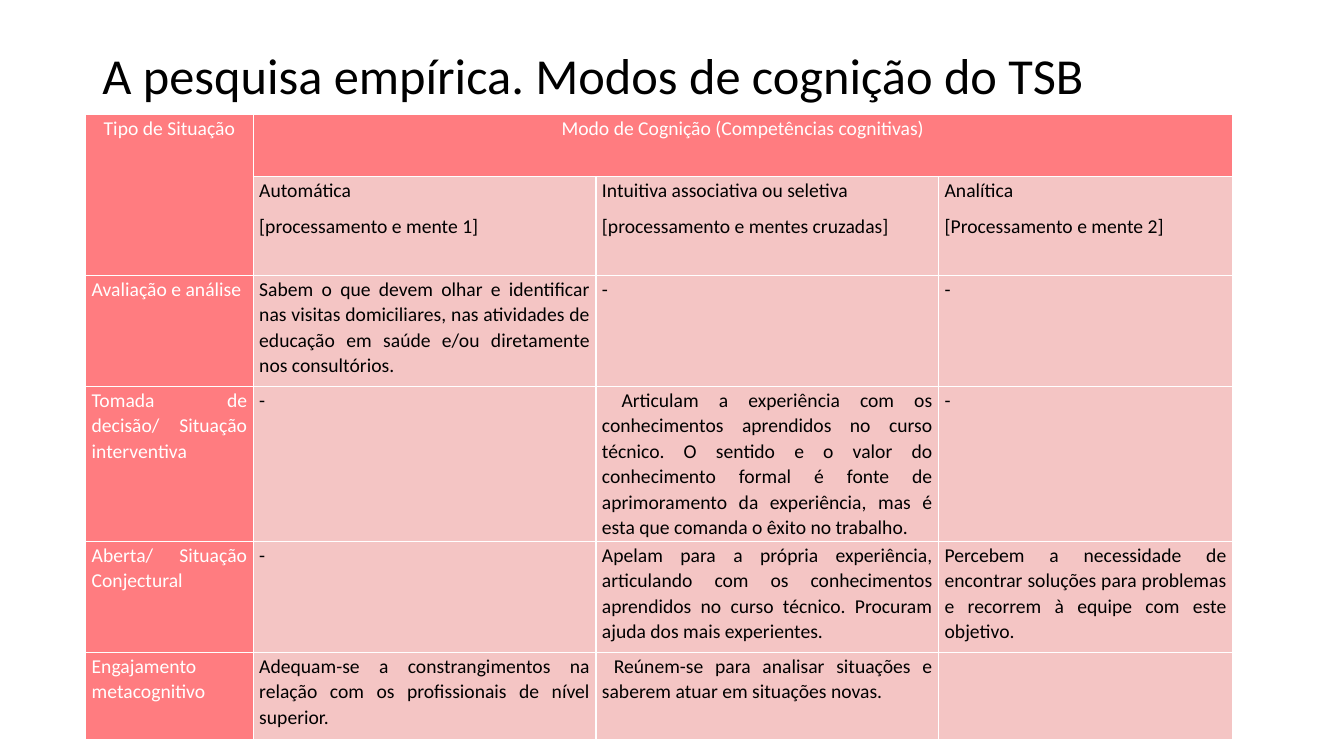
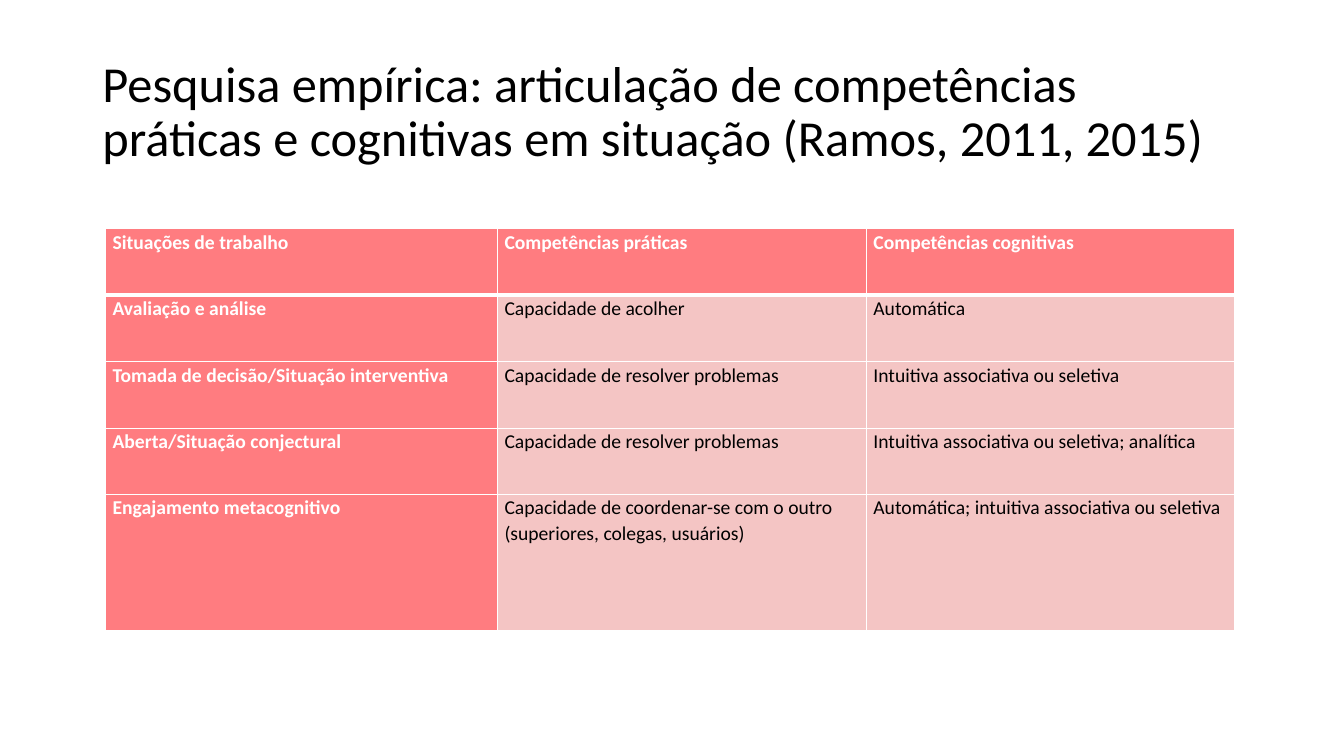
from dataclasses import dataclass

from lxml import etree
from pptx import Presentation
from pptx.dml.color import RGBColor
from pptx.enum.text import MSO_ANCHOR, MSO_AUTO_SIZE, PP_ALIGN
from pptx.oxml.ns import qn
from pptx.util import Pt

LEFT, CENTER, JUSTIFY = PP_ALIGN.LEFT, PP_ALIGN.CENTER, PP_ALIGN.JUSTIFY
MIDDLE, TOP = MSO_ANCHOR.MIDDLE, MSO_ANCHOR.TOP
NO_AUTOFIT = MSO_AUTO_SIZE.NONE
TITLE_ONLY = 5


@dataclass(frozen=True)
class Theme:
    font: str = "Calibri"
    title_size: float = 36
    cell_size: float = 14
    title_spacing: float = 0.9
    cell_spacing: float = 1.07
    text: str = "000000"
    header_text: str = "FFFFFF"
    header_fill: str = "FF7C80"
    body_fill: str = "F4C5C4"
    border: str = "FFFFFF"


THEME = Theme()

# Content: a cell is one text, or a list of paragraphs; None is covered by a merge
SLIDES = [
    dict(
        title="A pesquisa empírica. Modos de cognição do TSB",
        title_height=54.7,
        origin=(61.2, 82),
        columns=[119.7, 244.8, 244.8, 210],
        rows=[44.3, 70.7, 79.3, 110.7, 79.3, 62.2],
        cells=[
            ["Tipo de Situação", "Modo de Cognição (Competências cognitivas)", None, None],
            [None,
             ["Automática", "[processamento e mente 1]"],
             ["Intuitiva associativa ou seletiva", "[processamento e mentes cruzadas]"],
             ["Analítica", "[Processamento e mente 2]"]],
            ["Avaliação e análise",
             "Sabem o que devem olhar e identificar nas visitas domiciliares, nas atividades "
             "de educação em saúde e/ou diretamente nos consultórios.",
             "-", "-"],
            ["Tomada de decisão/ Situação interventiva",
             "-",
             "Articulam a experiência com os conhecimentos aprendidos no curso técnico. "
             "O sentido e o valor do conhecimento formal é fonte de aprimoramento da "
             "experiência, mas é esta que comanda o êxito no trabalho.",
             "-"],
            ["Aberta/ Situação Conjectural",
             "-",
             "Apelam para a própria experiência, articulando com os conhecimentos aprendidos "
             "no curso técnico. Procuram ajuda dos mais experientes.",
             "Percebem a necessidade de encontrar soluções para problemas e recorrem à equipe "
             "com este objetivo."],
            ["Engajamento metacognitivo",
             "Adequam-se a constrangimentos na relação com os profissionais de nível superior.",
             "Reúnem-se para analisar situações e saberem atuar em situações novas.",
             None],
        ],
        merges=[((0, 0), (1, 0)), ((0, 1), (0, 3))],
        indents={(3, 2): 14, (5, 2): 8.5},
        inset=4.3, align=JUSTIFY, top_align=CENTER, after=8,
        header_bold=False, header_rule=1,
    ),
    dict(
        title="Pesquisa empírica: articulação de competências práticas e cognitivas "
              "em situação (Ramos, 2011, 2015)",
        title_height=104.4,
        origin=(75.2, 163.4),
        columns=[280, 263.5, 263.5],
        rows=[47.5] * 4 + [97],
        cells=[
            ["Situações de trabalho", "Competências práticas", "Competências cognitivas"],
            ["Avaliação e análise", "Capacidade de acolher", "Automática"],
            ["Tomada de decisão/Situação interventiva", "Capacidade de resolver problemas",
             "Intuitiva associativa ou seletiva"],
            ["Aberta/Situação conjectural", "Capacidade de resolver problemas",
             "Intuitiva associativa ou seletiva; analítica"],
            ["Engajamento metacognitivo",
             "Capacidade de coordenar-se com o outro (superiores, colegas, usuários)",
             "Automática; intuitiva associativa ou seletiva"],
        ],
        merges=[], indents={},
        inset=5.2, align=LEFT, top_align=LEFT, after=0,
        header_bold=True, header_rule=3,
    ),
]


def write_text(frame, text, *, size, color=THEME.text, bold=False, align=LEFT,
               spacing=1.0, after=0, indent=0):
    """Fill a text frame with one formatted paragraph per text."""
    paragraphs = [text] if isinstance(text, str) else text
    for number, words in enumerate(paragraphs):
        para = frame.add_paragraph() if number else frame.paragraphs[0]
        para.alignment = align
        para.line_spacing = spacing
        para.space_before, para.space_after = Pt(0), Pt(after)
        if indent:
            para._p.get_or_add_pPr().set("indent", str(Pt(indent)))
        span = para.add_run()
        span.text = words
        span.font.name = THEME.font
        span.font.size = Pt(size)
        span.font.bold = bold
        span.font.color.rgb = RGBColor.from_string(color)


def set_borders(cell, **widths):
    """Draw the cell's L, R, T and B borders; call before filling the cell."""
    properties = cell._tc.get_or_add_tcPr()
    for side, width in widths.items():
        line = etree.SubElement(properties, qn(f"a:ln{side}"), w=str(Pt(width)))
        fill = etree.SubElement(line, qn("a:solidFill"))
        etree.SubElement(fill, qn("a:srgbClr"), val=THEME.border)


def add_title(page, text, height):
    title = page.shapes.title
    title.left, title.top = Pt(66), Pt(28.75)
    title.width, title.height = Pt(828), Pt(height)
    frame = title.text_frame
    frame.word_wrap = True
    frame.auto_size = NO_AUTOFIT
    frame.vertical_anchor = MIDDLE
    write_text(frame, text, size=THEME.title_size, spacing=THEME.title_spacing)


def add_grid(page, content):
    columns, rows = content["columns"], content["rows"]
    left, top = content["origin"]
    table = page.shapes.add_table(len(rows), len(columns), Pt(left), Pt(top),
                                  Pt(sum(columns)), Pt(sum(rows))).table
    table.first_row = table.horz_banding = False
    for column, width in zip(table.columns, columns):
        column.width = Pt(width)
    for row, height in zip(table.rows, rows):
        row.height = Pt(height)
    for start, end in content["merges"]:
        table.cell(*start).merge(table.cell(*end))

    # The top row and the first column are headers
    for r, texts in enumerate(content["cells"]):
        for c, text in enumerate(texts):
            cell = table.cell(r, c)
            header = r == 0 or c == 0
            rule = content["header_rule"]
            set_borders(cell, L=1, R=1, T=rule if r == 1 else 1, B=rule if r == 0 else 1)
            cell.fill.solid()
            cell.fill.fore_color.rgb = RGBColor.from_string(
                THEME.header_fill if header else THEME.body_fill)
            cell.margin_left = cell.margin_right = Pt(content["inset"])
            cell.margin_top = cell.margin_bottom = Pt(0)
            cell.vertical_anchor = TOP
            if text:
                write_text(cell.text_frame, text, size=THEME.cell_size,
                           color=THEME.header_text if header else THEME.text,
                           bold=header and content["header_bold"],
                           align=content["top_align"] if r == 0 else content["align"],
                           spacing=THEME.cell_spacing, after=content["after"],
                           indent=content["indents"].get((r, c), 0))


def main():
    deck = Presentation()
    deck.slide_width, deck.slide_height = Pt(960), Pt(540)
    for content in SLIDES:
        page = deck.slides.add_slide(deck.slide_layouts[TITLE_ONLY])
        add_title(page, content["title"], content["title_height"])
        add_grid(page, content)
    deck.save("out.pptx")


if __name__ == "__main__":
    main()
